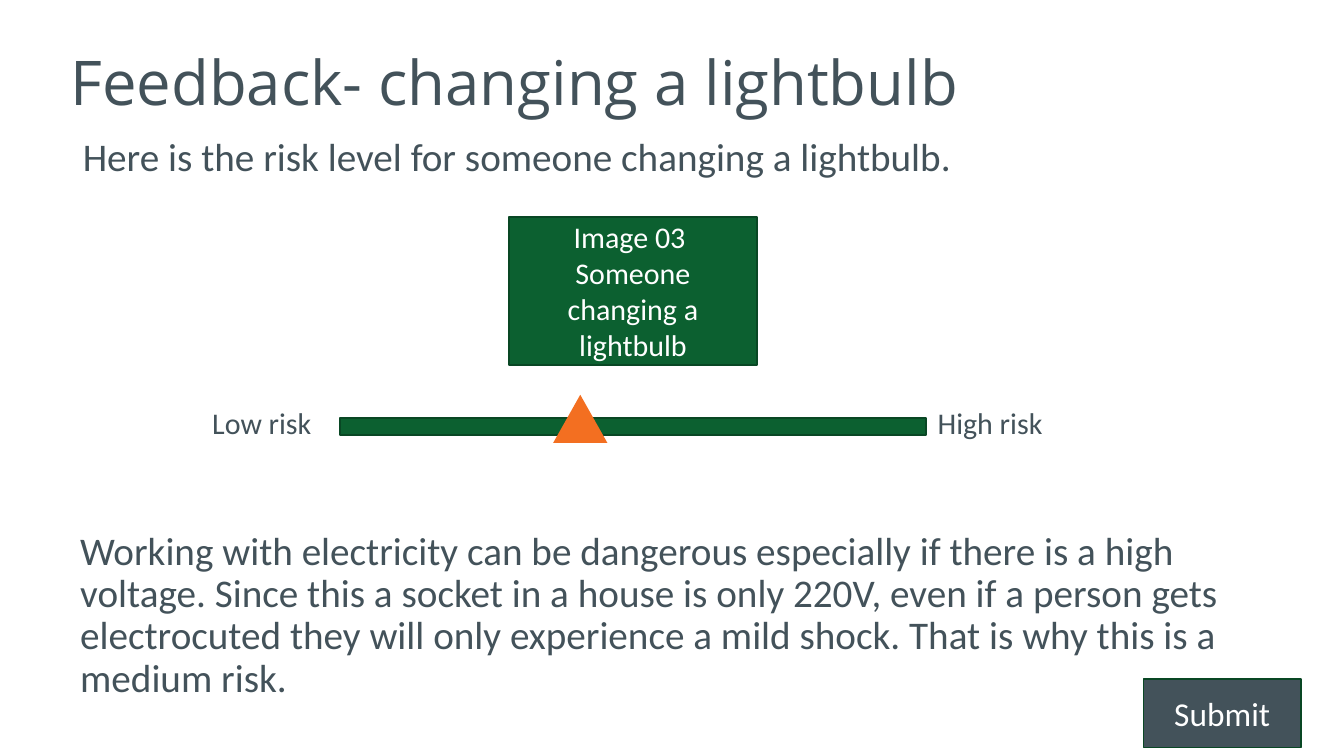
from pptx import Presentation
from pptx.dml.color import RGBColor
from pptx.enum.shapes import MSO_SHAPE
from pptx.enum.text import MSO_ANCHOR, PP_ALIGN
from pptx.util import Inches, Pt

RECTANGLE, TRIANGLE = MSO_SHAPE.RECTANGLE, MSO_SHAPE.ISOSCELES_TRIANGLE
TOP, MIDDLE = MSO_ANCHOR.TOP, MSO_ANCHOR.MIDDLE
LEFT, CENTER = PP_ALIGN.LEFT, PP_ALIGN.CENTER
WIDTH, HEIGHT = 11.2, 6.3
HEADING_FONT, BODY_FONT = "Open Sans", "Calibri"
COLORS = {
    "slate": "43525A",
    "green": "0C6030",
    "edge": "094724",
    "orange": "F36F21",
    "white": "FFFFFF",
}


def color(name):
    """Return the named palette colour."""
    return RGBColor.from_string(COLORS[name])


def inside(box, left, top, width, height):
    """Return the part of a box given by shares of its size."""
    x, y, w, h = box
    return x + left * w, y + top * h, width * w, height * h


def write(shape, paragraphs, size, ink="slate", font=BODY_FONT,
          align=LEFT, anchor=TOP, spacing=1.0):
    """Fill a shape with evenly styled paragraphs."""
    frame = shape.text_frame
    frame.word_wrap = True
    frame.vertical_anchor = anchor
    for index, words in enumerate(paragraphs):
        paragraph = frame.add_paragraph() if index else frame.paragraphs[0]
        paragraph.alignment = align
        paragraph.line_spacing = spacing
        run = paragraph.add_run()
        run.text = words
        run.font.size = Pt(size)
        run.font.name = font
        run.font.color.rgb = color(ink)


def add_text(slide, box, words, size, **style):
    """Place one paragraph of plain text in a box."""
    write(slide.shapes.add_textbox(*map(Inches, box)), [words], size, **style)


def add_block(slide, box, fill, kind=RECTANGLE, edge="edge"):
    """Place a flat filled shape, outlined when an edge colour is given."""
    block = slide.shapes.add_shape(kind, *map(Inches, box))
    block.shadow.inherit = False
    block.fill.solid()
    block.fill.fore_color.rgb = color(fill)
    if edge:
        block.line.color.rgb = color(edge)
        block.line.width = Pt(1)
    else:
        block.line.fill.background()
    return block


def add_header(slide, box):
    """Place the title and the introduction."""
    add_text(slide, inside(box, 0, 0, 0.95, 0.84),
             "Feedback- changing a lightbulb", 37,
             font=HEADING_FONT, anchor=MIDDLE, spacing=0.9)
    add_text(slide, inside(box, 0.01, 0.69, 0.99, 0.31),
             "Here is the risk level for someone changing a lightbulb.",
             23.5, spacing=0.9)


def add_scenario(slide, box):
    """Place the card that describes the situation."""
    write(add_block(slide, box, "green"),
          ["Image 03 ", "Someone changing a lightbulb"], 18,
          ink="white", align=CENTER, anchor=MIDDLE)


def add_risk_scale(slide, box, level):
    """Place the risk bar, its end labels and a marker at the level."""
    bar_start, bar_width, marker_width = 0.155, 0.65, 0.06
    add_block(slide, inside(box, bar_start, 0.48, bar_width, 0.36), "green")
    add_text(slide, inside(box, 0, 0.08, 0.14, 1), "Low risk", 18)
    add_text(slide, inside(box, bar_start + bar_width, 0.08, 0.195, 1),
             "High risk", 18)
    marker_start = bar_start + level * bar_width - marker_width / 2
    add_block(slide, inside(box, marker_start, 0, marker_width, 1),
              "orange", TRIANGLE, edge=None)


def add_explanation(slide, box):
    """Place the reasoning behind the risk level."""
    add_text(slide, box,
             "Working with electricity can be dangerous especially if there "
             "is a high voltage. Since this a socket in a house is only 220V, "
             "even if a person gets electrocuted they will only experience a "
             "mild shock. That is why this is a medium risk.",
             23.5, spacing=0.9)


def add_submit(slide, box):
    """Place the submit button."""
    write(add_block(slide, box, "slate"), ["Submit"], 20,
          ink="white", align=CENTER, anchor=MIDDLE)


def main():
    """Build and save the feedback slide."""
    deck = Presentation()
    deck.slide_width, deck.slide_height = Inches(WIDTH), Inches(HEIGHT)
    slide = deck.slides.add_slide(deck.slide_layouts[6])
    add_header(slide, (0.49, 0.1, 10.2, 1.45))
    add_risk_scale(slide, (1.67, 3.29, 7.51, 0.4), level=0.41)
    add_explanation(slide, (0.57, 4.38, 10.15, 1.55))
    add_submit(slide, (9.53, 5.66, 1.31, 0.57))
    add_scenario(slide, (4.24, 1.81, 2.07, 1.23))
    deck.save("out.pptx")


if __name__ == "__main__":
    main()
